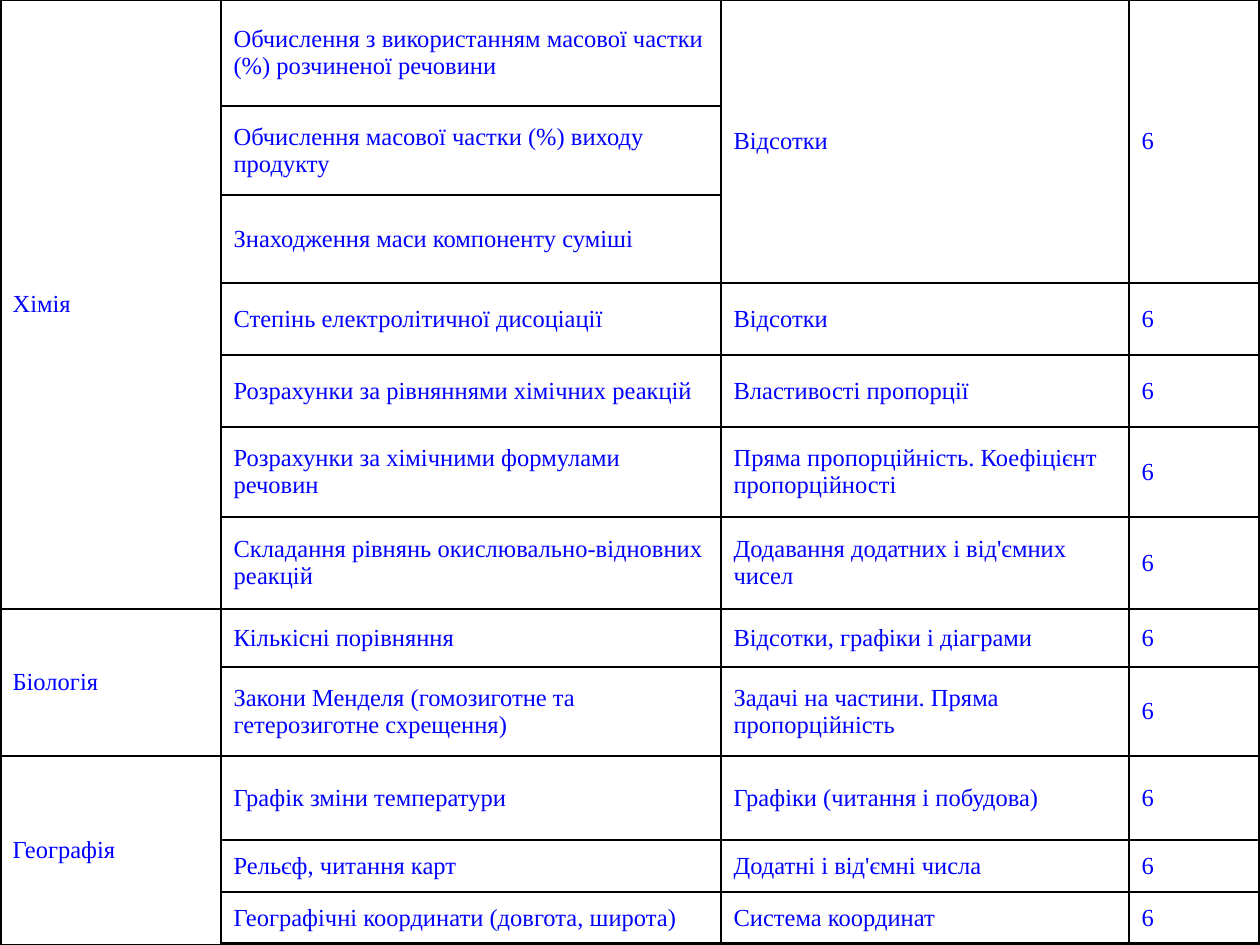
import pptx
import pptx.util
import pptx.dml.color
import pptx.enum.text
import pptx.oxml
import pptx.oxml.ns

# Content: subject -> (topic, mathematics needed, grade); None continues the cell above
SUBJECTS = [
    ("Хімія", [
        ("Обчислення з використанням масової частки (%) розчиненої речовини", "Відсотки", "6"),
        ("Обчислення масової частки (%) виходу продукту", None, None),
        ("Знаходження маси компоненту суміші", None, None),
        ("Степінь електролітичної дисоціації", "Відсотки", "6"),
        ("Розрахунки за рівняннями хімічних реакцій", "Властивості пропорції", "6"),
        ("Розрахунки за хімічними формулами речовин",
         "Пряма пропорційність. Коефіцієнт пропорційності", "6"),
        ("Складання рівнянь окислювально-відновних реакцій",
         "Додавання додатних і від'ємних чисел", "6"),
    ]),
    ("Біологія", [
        ("Кількісні порівняння", "Відсотки, графіки і діаграми", "6"),
        ("Закони Менделя (гомозиготне та гетерозиготне схрещення)",
         "Задачі на частини. Пряма пропорційність", "6"),
    ]),
    ("Географія", [
        ("Графік зміни температури", "Графіки (читання і побудова)", "6"),
        ("Рельєф, читання карт", "Додатні і від'ємні числа", "6"),
        ("Географічні координати (довгота, широта)", "Система координат", "6"),
    ]),
]
COL_WIDTHS = [221, 500, 408, 131]
ROW_HEIGHTS = [106, 89, 88, 72, 72, 90, 92, 58, 89, 84, 52, 53]
COLORS = {"text": "0000FF", "fill": "FFFFFF", "border": "000000"}
FONT = "Times New Roman"
THIN, THICK = 1, 3


def px(n):
    return pptx.util.Emu(round(n * 914400 / 126))


def rgb(name):
    return pptx.dml.color.RGBColor.from_string(COLORS[name])


def write(cell, text, size=14, color="text", font=FONT):
    cell.vertical_anchor = pptx.enum.text.MSO_ANCHOR.MIDDLE
    r = cell.text_frame.paragraphs[0].add_run()
    r.text = text
    r.font.size = pptx.util.Pt(size)
    r.font.name = font
    r.font.color.rgb = rgb(color)


def set_borders(cell, widths):
    tcPr = cell._tc.get_or_add_tcPr()
    for i, (side, width) in enumerate(widths.items()):
        ln = pptx.oxml.parse_xml(
            f'<a:{side} {pptx.oxml.ns.nsdecls("a")} w="{pptx.util.Pt(width)}">'
            f'<a:solidFill><a:srgbClr val="{COLORS["border"]}"/></a:solidFill></a:{side}>')
        tcPr.insert(i, ln)


# Flatten subjects into table rows
rows = [(subject if i == 0 else None, *topic)
        for subject, topics in SUBJECTS for i, topic in enumerate(topics)]
last_row, last_col = len(rows) - 1, len(COL_WIDTHS) - 1

prs = pptx.Presentation()
prs.slide_width, prs.slide_height = px(1260), px(945)
s = prs.slides.add_slide(prs.slide_layouts[6])

# Table grid
table = s.shapes.add_table(len(rows), len(COL_WIDTHS), 0, 0,
                           px(sum(COL_WIDTHS)), px(sum(ROW_HEIGHTS))).table
table.first_row = table.horz_banding = False
for col, width in zip(table.columns, COL_WIDTHS):
    col.width = px(width)
for row, height in zip(table.rows, ROW_HEIGHTS):
    row.height = px(height)

# Cells: thick outer sides and bottom, thin lines elsewhere
for i, row in enumerate(rows):
    for j, text in enumerate(row):
        cell = table.cell(i, j)
        cell.fill.solid()
        cell.fill.fore_color.rgb = rgb("fill")
        set_borders(cell, {
            "lnL": THICK if j == 0 else THIN,
            "lnR": THICK if j == last_col else THIN,
            "lnT": THIN,
            "lnB": THICK if i == last_row else THIN,
        })
        if text is not None:
            write(cell, text)

# Merge each cell with the continuation cells below it
for j in range(len(COL_WIDTHS)):
    starts = [i for i, row in enumerate(rows) if row[j] is not None]
    for top, following in zip(starts, starts[1:] + [len(rows)]):
        if following - top > 1:
            table.cell(top, j).merge(table.cell(following - 1, j))

prs.save("out.pptx")
